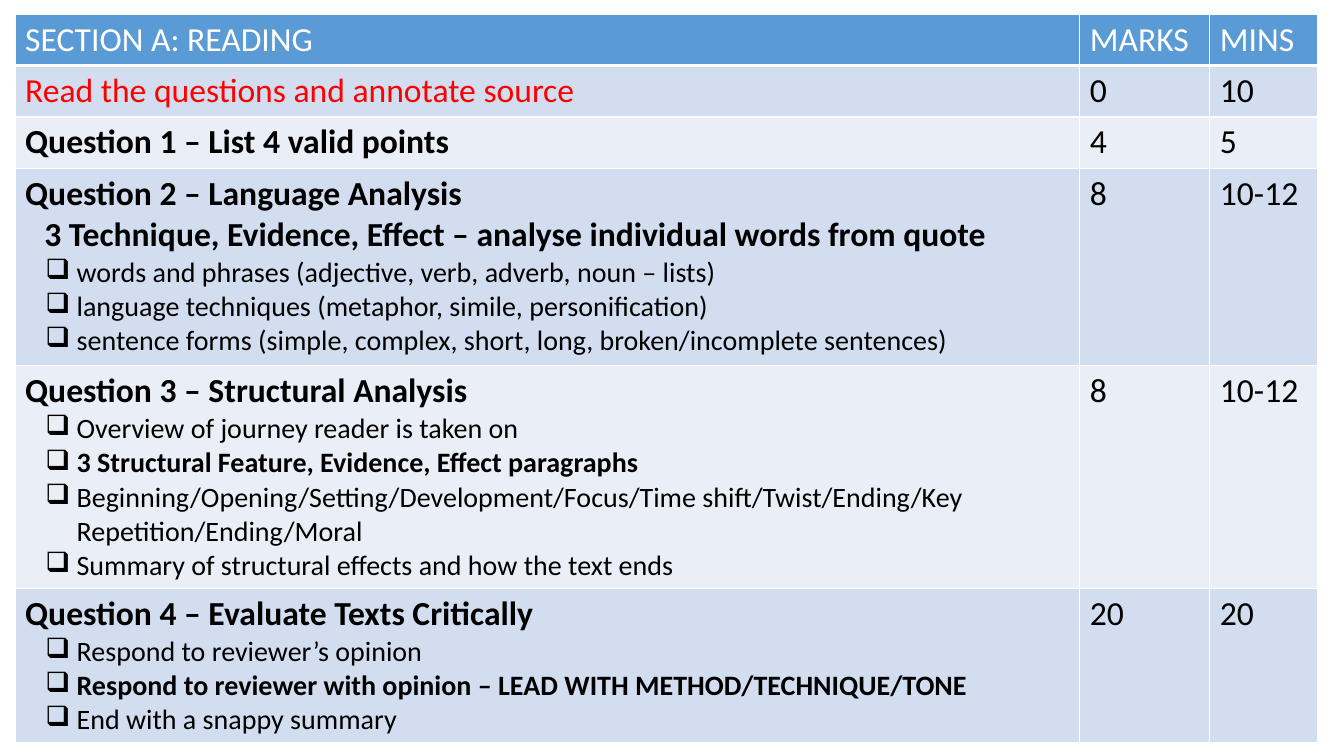
from lxml import etree
from pptx import Presentation
from pptx.dml.color import RGBColor
from pptx.oxml.ns import qn
from pptx.util import Inches, Pt

FONT = "Calibri"
WHITE, BLACK, RED = "FFFFFF", "000000", "FF0000"
HEADER_FILL, BAND_FILLS = "5B9BD5", ("EAEFF7", "D2DEEF")
COLUMN_WIDTHS = (10.56, 1.29, 1.07)
ROW_HEIGHTS = (0.51, 0.51, 0.51, 1.96, 2.1, 1.51)


def heading(text, color=BLACK, bold=True):
    return text, dict(color=color, bold=bold)


def point(text, level=1, bold=False):
    return text, dict(size=20, bold=bold, level=level, margin=0.51, hanging=0.31, bullet="❑")


def plan_rows():
    return [
        ([heading("SECTION A: READING", WHITE, False)], "MARKS", "MINS"),
        ([heading("Read the questions and annotate source", RED, False)], "0", "10"),
        ([heading("Question 1 – List 4 valid points")], "4", "5"),
        ([
            heading("Question 2 – Language Analysis"),
            ("3 Technique, Evidence, Effect – analyse individual words from quote",
             dict(bold=True, level=1, margin=0.19)),
            point("words and phrases (adjective, verb, adverb, noun – lists)", 2),
            point("language techniques (metaphor, simile, personification)", 2),
            point("sentence forms (simple, complex, short, long, broken/incomplete sentences)", 2),
        ], "8", "10-12"),
        ([
            heading("Question 3 – Structural Analysis"),
            point("Overview of journey reader is taken on"),
            point("3 Structural Feature, Evidence, Effect paragraphs", bold=True),
            point("Beginning/Opening/Setting/Development/Focus/Time shift/Twist/Ending/Key "
                  "Repetition/Ending/Moral"),
            point("Summary of structural effects and how the text ends"),
        ], "8", "10-12"),
        ([
            heading("Question 4 – Evaluate Texts Critically"),
            point("Respond to reviewer’s opinion"),
            point("Respond to reviewer with opinion – LEAD WITH METHOD/TECHNIQUE/TONE", bold=True),
            point("End with a snappy summary"),
        ], "20", "20"),
    ]


def rgb(color):
    return RGBColor.from_string(color)


def write_text(paragraph, text, size=24, color=BLACK, bold=False, level=0,
               margin=0, hanging=0, bullet=None):
    paragraph.level = level
    run = paragraph.add_run()
    run.text = text
    run.font.name = FONT
    run.font.size = Pt(size)
    run.font.bold = bold
    run.font.color.rgb = rgb(color)
    properties = paragraph._p.get_or_add_pPr()
    properties.set("marL", str(Inches(margin)))
    properties.set("indent", str(-Inches(hanging)))
    if bullet:
        etree.SubElement(properties, qn("a:buChar")).set("char", bullet)


def set_borders(cell, bottom_width):
    properties = cell._tc.get_or_add_tcPr()
    widths = {"a:lnL": 1, "a:lnR": 1, "a:lnT": 1, "a:lnB": bottom_width}
    for position, (side, width) in enumerate(widths.items()):
        border = etree.Element(qn(side), w=str(Pt(width)))
        fill = etree.SubElement(border, qn("a:solidFill"))
        etree.SubElement(fill, qn("a:srgbClr")).set("val", WHITE)
        properties.insert(position, border)


def fill_cell(cell, entries, fill, bottom_width):
    cell.fill.solid()
    cell.fill.fore_color.rgb = rgb(fill)
    set_borders(cell, bottom_width)
    frame = cell.text_frame
    for index, (text, style) in enumerate(entries):
        paragraph = frame.add_paragraph() if index else frame.paragraphs[0]
        write_text(paragraph, text, **style)


def add_exam_plan(slide):
    rows = plan_rows()
    plan = slide.shapes.add_table(
        len(rows), len(COLUMN_WIDTHS), Inches(0.15), Inches(0.14),
        Inches(sum(COLUMN_WIDTHS)), Inches(sum(ROW_HEIGHTS))).table
    for column, width in zip(plan.columns, COLUMN_WIDTHS):
        column.width = Inches(width)
    for index, (tasks, marks, minutes) in enumerate(rows):
        is_header = index == 0
        plan.rows[index].height = Inches(ROW_HEIGHTS[index])
        fill = HEADER_FILL if is_header else BAND_FILLS[index % 2]
        if index in (1, 3, 5):
            fill = BAND_FILLS[1]
        elif not is_header:
            fill = BAND_FILLS[0]
        number_color = WHITE if is_header else BLACK
        numbers = [[heading(value, number_color, False)] for value in (marks, minutes)]
        for cell, entries in zip(plan.rows[index].cells, [tasks, *numbers]):
            fill_cell(cell, entries, fill, 3 if is_header else 1)


def main():
    presentation = Presentation()
    presentation.slide_width = Inches(13.33)
    presentation.slide_height = Inches(7.5)
    slide = presentation.slides.add_slide(presentation.slide_layouts[6])
    add_exam_plan(slide)
    presentation.save("out.pptx")


if __name__ == "__main__":
    main()
